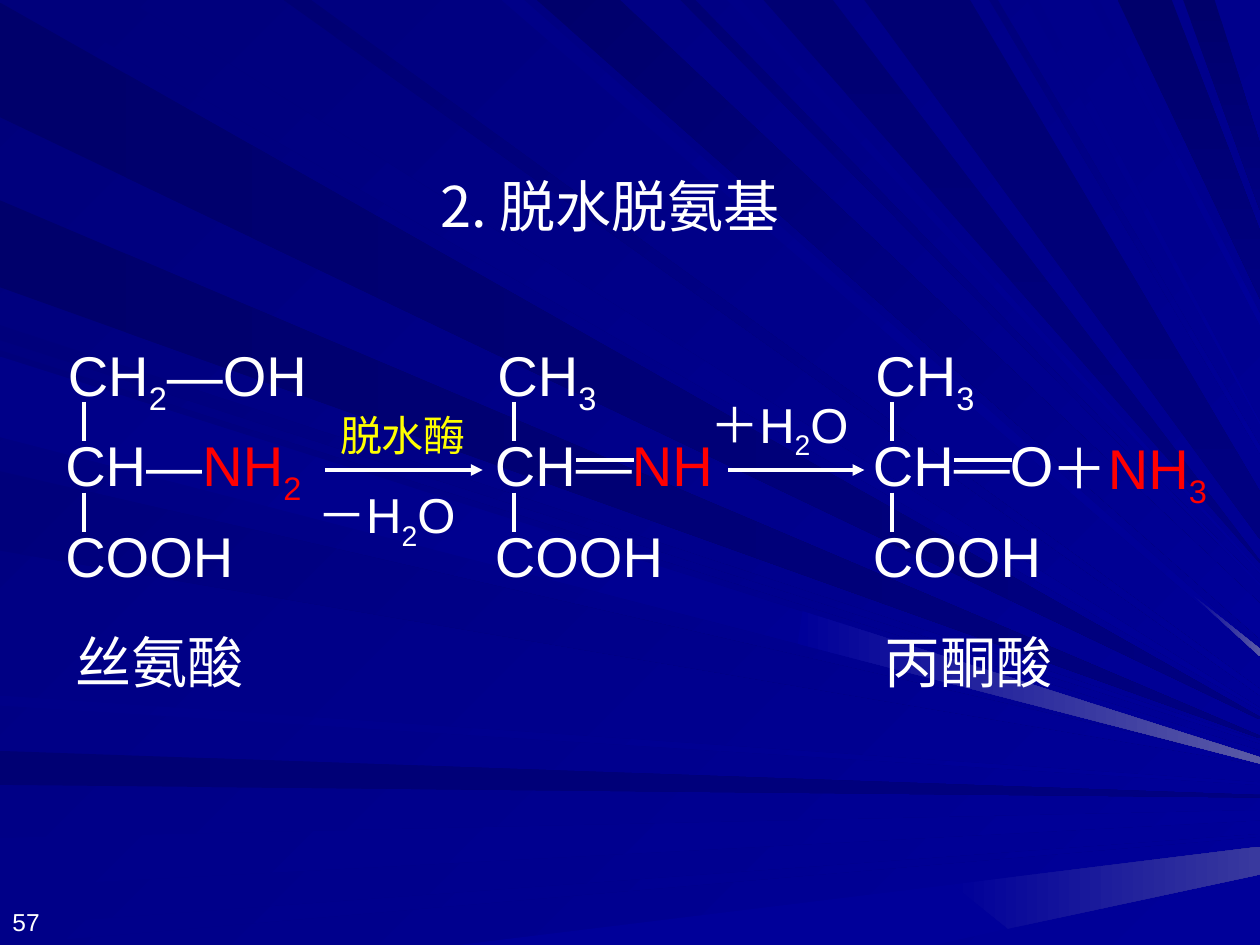
from typing import NamedTuple

from lxml import etree
from pptx import Presentation
from pptx.dml.color import RGBColor
from pptx.enum.shapes import MSO_CONNECTOR
from pptx.enum.text import MSO_ANCHOR, PP_ALIGN
from pptx.oxml.ns import qn
from pptx.util import Inches, Pt

STRAIGHT = MSO_CONNECTOR.STRAIGHT
TOP, BOTTOM = MSO_ANCHOR.TOP, MSO_ANCHOR.BOTTOM
LEFT, CENTER = PP_ALIGN.LEFT, PP_ALIGN.CENTER
LATIN, HAN = "Arial", "Noto Sans CJK SC"
WIDE, HIGH = 10, 7.5

WHITE = RGBColor.from_string("FFFFFF")
RED = RGBColor.from_string("FF0000")
YELLOW = RGBColor.from_string("FFFF00")
INK = RGBColor.from_string("00006B")
DARK = RGBColor.from_string("000073")
DEEP = RGBColor.from_string("00007B")
NAVY = RGBColor.from_string("000080")
MID = RGBColor.from_string("000088")
BLUE = RGBColor.from_string("000099")
DUSK = RGBColor.from_string("39399E")
GLOW = RGBColor.from_string("5A5AA6")


class Ray(NamedTuple):
    """A beam from the left or top edge to the right edge."""
    top: bool
    near: float
    far: float
    tip: float
    start: RGBColor
    end: RGBColor = BLUE
    thick: float = 0.02


class Patch(NamedTuple):
    end: RGBColor
    points: list


class Run(NamedTuple):
    text: str
    color: RGBColor = WHITE
    sub: bool = False


class Label(NamedTuple):
    left: float
    top: float
    width: float
    height: float
    runs: list
    size: int = 32
    font: str = LATIN
    align: PP_ALIGN = LEFT
    anchor: MSO_ANCHOR = TOP


class Bond(NamedTuple):
    x1: float
    y1: float
    x2: float
    y2: float
    arrow: bool = False


class Chain(NamedTuple):
    left: float
    head: list
    middle: list
    double: bool


RAYS = [
    Ray(False, 0.02, 0.93, 5.69, INK, NAVY),
    Ray(True, 0.26, 1.01, 5.62, DEEP),
    Ray(False, 5.96, 6.23, 6.31, DARK, NAVY),
    Ray(False, 6.65, 7.04, 6.43, MID, thick=0.08),
    Ray(False, 7.35, HIGH, 6.62, MID),
    Ray(False, 2.58, 2.7, 5.88, DEEP),
    Ray(False, 1.59, 2.28, 5.84, INK, NAVY),
    Ray(True, 3.98, 4.16, 5.15, MID, thick=0.06),
    Ray(True, 4.26, 4.92, 4.79, INK, thick=0.28),
    Ray(True, 5.4, 5.52, 4.63, DARK),
    Ray(True, 6.06, 6.61, 4.45, DARK, NAVY),
    Ray(True, 8.87, 9.3, 1.83, INK, NAVY, 0.54),
    Ray(True, 9.39, 9.64, 1.14, INK, NAVY, 0.53),
    Ray(False, 2.78, 3.42, 5.96, DEEP, thick=0.06),
    Ray(False, 3.74, 4.37, 6.05, DEEP),
    Ray(False, 5.52, 5.6, 6.21, MID),
    Ray(True, 2.25, 2.47, 5.47, DARK, thick=0.05),
    Ray(True, 5.77, 5.88, 4.53, MID),
    Ray(True, 6.86, 7.7, 3.9, DARK, NAVY, 0.38),
    Ray(True, 7.85, 7.92, 3.54, DEEP, thick=0.06),
    Ray(True, 8.15, 8.24, 3.35, MID),
    Ray(True, 8.65, 8.72, 2.49, MID, thick=0.09),
    Ray(False, 2.83, 3.47, 6.01, MID, thick=0.05),
]
PATCHES = [
    Patch(BLUE, [(3.64, HIGH), (7.42, HIGH), (8, 7.37), (7.56, 7.02)]),
    Patch(DUSK, [(7.56, 7.02), (8, 7.37), (WIDE, 6.94), (WIDE, 6.72)]),
    Patch(GLOW, [(9.45, 4.71), (WIDE, 5.15), (WIDE, 5.21)]),
    Patch(GLOW, [(6.37, 4.85), (WIDE, 6.01), (WIDE, 6.06), (6.33, 5.11)]),
]

TWO, THREE = Run("2", sub=True), Run("3", sub=True)
CHAINS = [
    Chain(0.42, [Run("CH"), TWO, Run("—OH")],
          [Run("CH—"), Run("NH", RED), Run("2", RED, True)], False),
    Chain(3.83, [Run("CH"), THREE], [Run("CH—"), Run("NH", RED)], True),
    Chain(6.83, [Run("CH"), THREE], [Run("CH—O")], True),
]
LABELS = [
    Label(2.01, 1.31, 5.67, 0.63, [Run("2. 脱水脱氨基")], font=HAN, align=CENTER),
    Label(8.25, 3.39, 1.58, 0.63, [Run("＋"), Run("NH", RED), Run("3", RED, True)]),
    Label(2.6, 3.2, 1.42, 0.5, [Run("脱水酶", YELLOW)], 24),
    Label(2.42, 3.8, 1.58, 0.57, [Run("－H"), TWO, Run("O")], 28),
    Label(5.54, 3.08, 1.58, 0.57, [Run("＋H"), TWO, Run("O")], 28),
    Label(0.5, 4.93, 1.67, 0.63, [Run("丝氨酸")]),
    Label(6.92, 4.93, 1.75, 0.63, [Run("丙酮酸")]),
    Label(0, 6.98, 0.98, 0.5, [Run("57")], 14, anchor=BOTTOM),
]
ARROWS = [Bond(2.58, 3.73, 3.83, 3.73, True), Bond(5.78, 3.73, 6.86, 3.73, True)]


def paint(fill, start: RGBColor, end: RGBColor, angle: int) -> None:
    if start == end:
        fill.solid()
        fill.fore_color.rgb = start
        return
    fill.gradient()
    fill.gradient_angle = -angle % 360
    for stop, color in zip(fill.gradient_stops, (start, end)):
        stop.color.rgb = color


def draw_patch(slide, patch: Patch, start: RGBColor = BLUE, angle: int = 0) -> None:
    first, *rest = [(Inches(x), Inches(y)) for x, y in patch.points]
    pen = slide.shapes.build_freeform(*first)
    pen.add_line_segments(rest, close=True)
    shape = pen.convert_to_shape()
    shape.shadow.inherit = False
    shape.line.fill.background()
    paint(shape.fill, start, patch.end, angle)


def draw_ray(slide, ray: Ray) -> None:
    tips = [(WIDE, ray.tip), (WIDE, ray.tip + ray.thick)]
    if ray.top:
        base = [(ray.near, 0), (ray.far, 0)]
    else:
        base = [(0, ray.far), (0, ray.near)]
    angle = 45 if ray.end == BLUE else 90 if ray.top else 0
    draw_patch(slide, Patch(ray.end, base + tips), ray.start, angle)


def draw_label(slide, label: Label) -> None:
    box = slide.shapes.add_textbox(*map(Inches, label[:4]))
    frame = box.text_frame
    for name, value in {"word_wrap": True, "vertical_anchor": label.anchor}.items():
        setattr(frame, name, value)
    para = frame.paragraphs[0]
    para.alignment = label.align
    for part in label.runs:
        run = para.add_run()
        run.text = part.text
        for name, value in {"size": Pt(label.size), "name": label.font}.items():
            setattr(run.font, name, value)
        run.font.color.rgb = part.color
        props = run._r.get_or_add_rPr()
        etree.SubElement(props, qn("a:ea"), typeface=HAN)
        if part.sub:
            props.set("baseline", "-25000")


def draw_bond(slide, bond: Bond) -> None:
    line = slide.shapes.add_connector(STRAIGHT, *map(Inches, bond[:4]))
    line.line.color.rgb = WHITE
    line.line.width = Pt(2.25)
    if bond.arrow:
        etree.SubElement(line.line._get_or_add_ln(), qn("a:tailEnd"), type="triangle")
    etree.SubElement(line._element.spPr, qn("a:effectLst"))


def draw_chain(slide, chain: Chain) -> None:
    x = chain.left
    rows = [chain.head, chain.middle, [Run("COOH")]]
    for i, runs in enumerate(rows):
        inset = 0.02 if i == 0 else 0
        draw_label(slide, Label(x + inset, 2.65 + 0.72 * i, 2.4, 0.63, runs))
    for y in (3.19, 3.91):
        draw_bond(slide, Bond(x + 0.25, y, x + 0.25, y + 0.31))
    if chain.double:
        draw_bond(slide, Bond(x + 0.74, 3.65, x + 1.2, 3.65))


def main() -> None:
    deck = Presentation()
    deck.slide_width, deck.slide_height = Inches(WIDE), Inches(HIGH)
    slide = deck.slides.add_slide(deck.slide_layouts[6])

    # Backdrop of light rays
    paint(slide.background.fill, DEEP, BLUE, 45)
    for ray in RAYS:
        draw_ray(slide, ray)
    for patch in PATCHES:
        draw_patch(slide, patch)

    # Reaction: molecules, arrows and labels
    for chain in CHAINS:
        draw_chain(slide, chain)
    for arrow in ARROWS:
        draw_bond(slide, arrow)
    for label in LABELS:
        draw_label(slide, label)

    deck.save("out.pptx")


if __name__ == "__main__":
    main()
